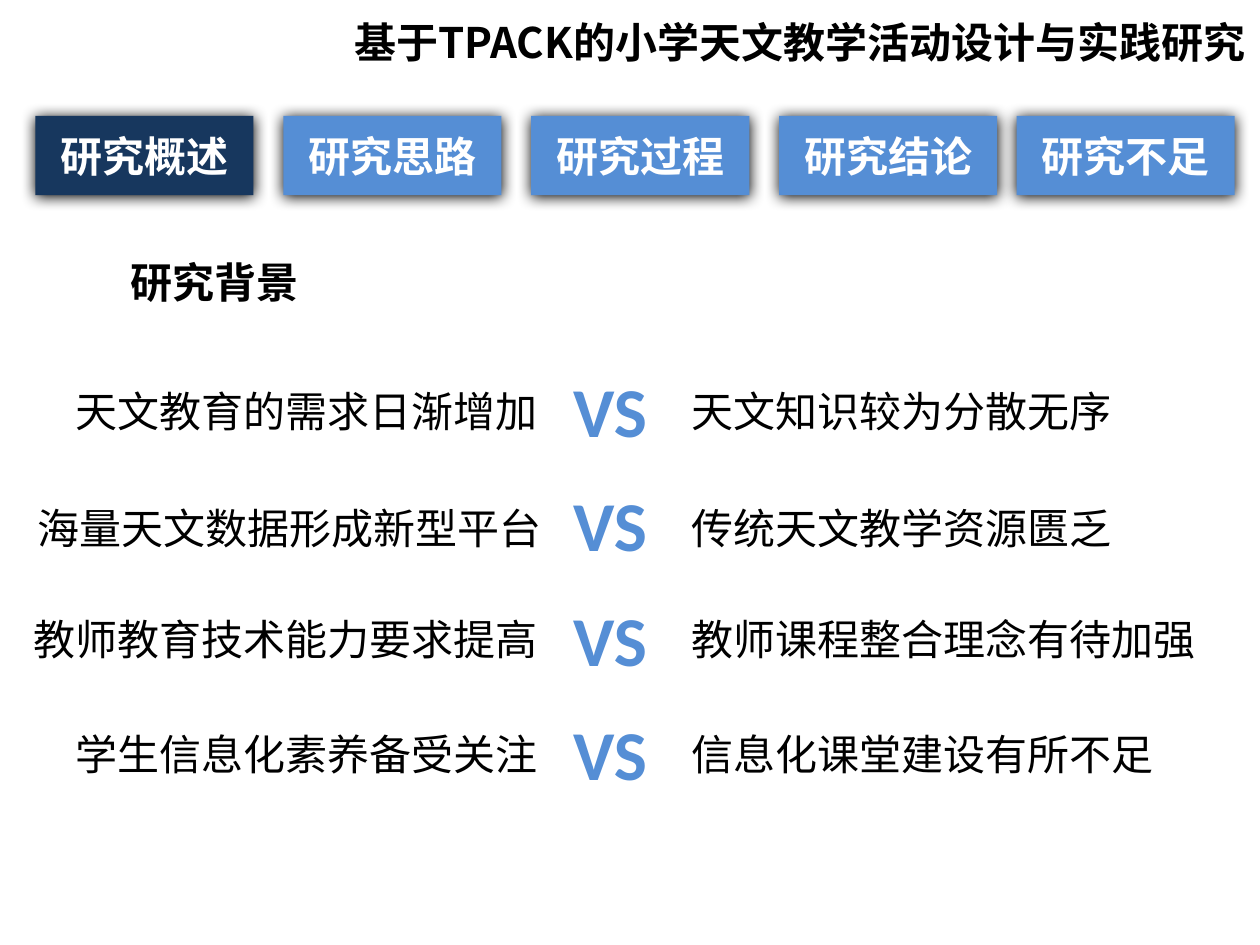
import pptx
import pptx.dml.color
import pptx.enum.shapes
import pptx.enum.text
import pptx.oxml
import pptx.oxml.ns
import pptx.util
from dataclasses import dataclass

Pt = pptx.util.Pt
Align = pptx.enum.text.PP_ALIGN
Anchor = pptx.enum.text.MSO_ANCHOR
AutoSize = pptx.enum.text.MSO_AUTO_SIZE


@dataclass(frozen=True)
class Theme:
    navy: str = "17375E"
    blue: str = "558ED5"
    black: str = "000000"
    white: str = "FFFFFF"
    latin: str = "Calibri"
    chinese: str = "Noto Sans CJK SC"
    body: int = 24
    versus: int = 40


THEME = Theme()

TITLE = "基于TPACK的小学天文教学活动设计与实践研究"
HEADING = "研究背景"
TABS = ["研究概述", "研究思路", "研究过程", "研究结论", "研究不足"]
TAB_LEFTS = [20.2 + 141.7 * step for step in range(4)] + [581]
CONTRASTS = [
    (216.7, 36, "天文教育的需求日渐增加", "天文知识较为分散无序"),
    (283.7, 14.4, "海量天文数据形成新型平台", "传统天文教学资源匮乏"),
    (347, 12.2, "教师教育技术能力要求提高", "教师课程整合理念有待加强"),
    (412.6, 36, "学生信息化素养备受关注", "信息化课堂建设有所不足"),
]


def apply(target, values):
    for name, value in values.items():
        setattr(target, name, value)


def write(shape, text, color, frame, font, align=Align.LEFT):
    apply(shape.text_frame, frame)
    para = shape.text_frame.paragraphs[0]
    para.alignment = align
    span = para.add_run()
    span.text = text
    apply(span.font, font)
    span.font.color.rgb = pptx.dml.color.RGBColor.from_string(color)
    east_asian = pptx.oxml.parse_xml(
        f'<a:ea {pptx.oxml.ns.nsdecls("a")} typeface="{THEME.chinese}"/>'
    )
    span.font._element.append(east_asian)


def add_label(page, place, text, color=THEME.black, size=THEME.body,
              bold=False, face=THEME.latin, wrap=False, align=Align.LEFT):
    box = page.shapes.add_textbox(*map(Pt, place))
    frame = {"word_wrap": wrap, "auto_size": AutoSize.SHAPE_TO_FIT_TEXT}
    font = {"name": face, "size": Pt(size), "bold": bold}
    write(box, text, color, frame, font, align)


def add_statement(page, left, top, text, bold=False):
    width = 14.4 + 24.25 * len(text)
    add_label(page, (left, top, width, 36.4), text, bold=bold)


def add_shadow(shape):
    shape.shadow.inherit = False
    effects = shape._element.spPr.find(pptx.oxml.ns.qn("a:effectLst"))
    effects.append(pptx.oxml.parse_xml(
        f'<a:outerShdw {pptx.oxml.ns.nsdecls("a")} blurRad="{Pt(8.5)}" '
        f'dist="{Pt(1)}" dir="5400000" algn="ctr" rotWithShape="0">'
        f'<a:srgbClr val="{THEME.black}"/></a:outerShdw>'
    ))


def add_tab(page, left, text, color):
    tab = page.shapes.add_shape(
        pptx.enum.shapes.MSO_SHAPE.RECTANGLE, *map(Pt, (left, 66.2, 124.6, 45.4))
    )
    tab.fill.solid()
    tab.fill.fore_color.rgb = pptx.dml.color.RGBColor.from_string(color)
    tab.line.fill.background()
    add_shadow(tab)
    frame = {"word_wrap": True, "vertical_anchor": Anchor.MIDDLE}
    font = {"name": THEME.chinese, "size": Pt(THEME.body), "bold": True}
    write(tab, text, THEME.white, frame, font, Align.CENTER)


def main():
    deck = pptx.Presentation()
    apply(deck, {"slide_width": Pt(720), "slide_height": Pt(540)})
    page = deck.slides.add_slide(deck.slide_layouts[6])

    add_label(page, (178.6, 5.8, 540, 36.4), TITLE, bold=True,
              face=THEME.chinese, wrap=True, align=Align.RIGHT)
    for left, text in zip(TAB_LEFTS, TABS):
        add_tab(page, left, text, THEME.navy if text == TABS[0] else THEME.blue)

    add_statement(page, 67.7, 143.3, HEADING, bold=True)
    for row, (top, left, demand, shortfall) in enumerate(CONTRASTS):
        add_statement(page, left, top, demand)
        add_label(page, (320.4, 206.6 + 65.3 * row, 57.6, 55.4), "VS",
                  THEME.blue, THEME.versus, bold=True)
        add_statement(page, 388.1, top, shortfall)

    deck.save("out.pptx")


if __name__ == "__main__":
    main()
